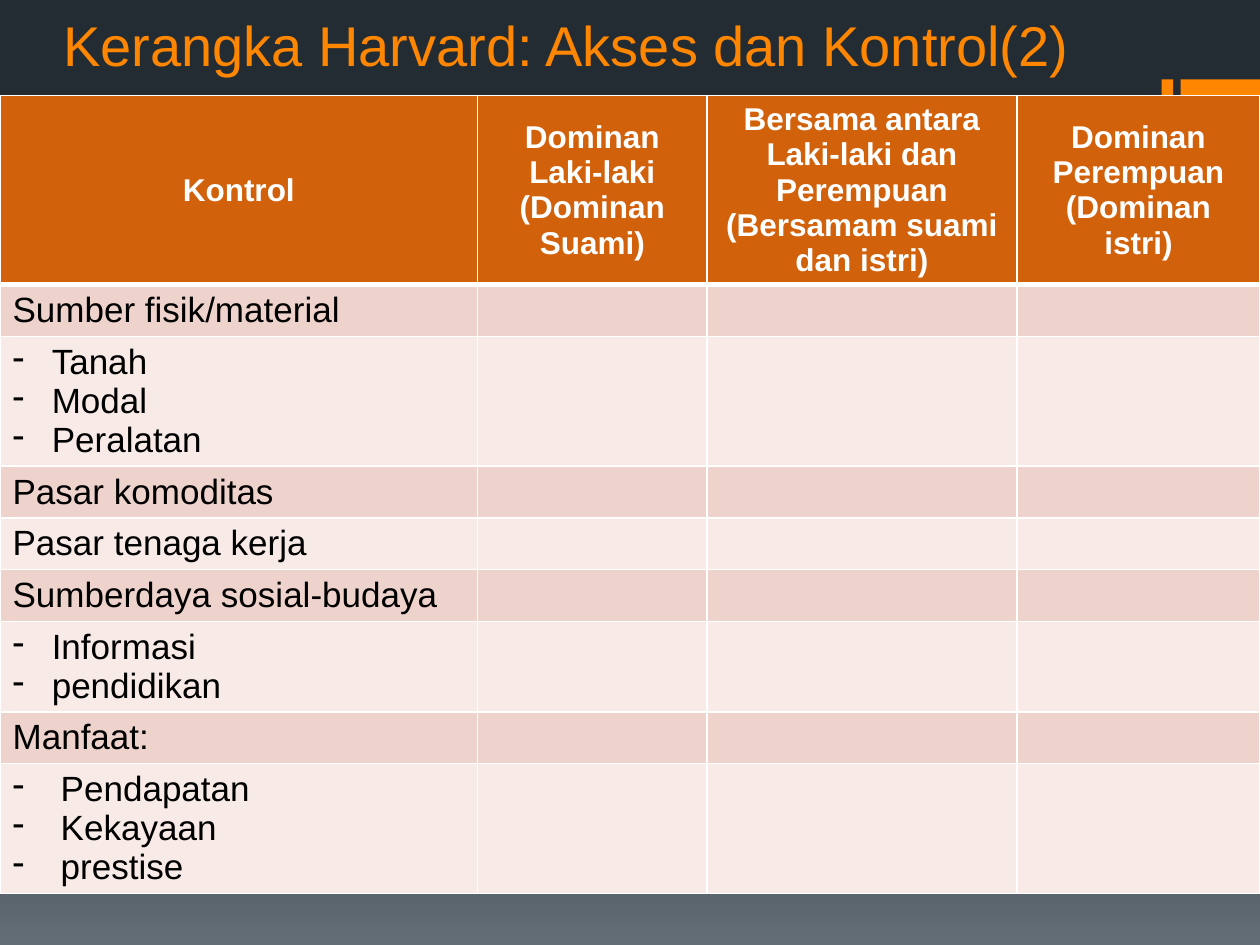
from copy import deepcopy

from lxml import etree
from pptx import Presentation
from pptx import util as u
from pptx.dml import color
from pptx.enum import shapes, text
from pptx.oxml import ns

COLORS = {
    "orange": "FF8600",
    "header": "D2610C",
    "odd_row": "EED2CC",
    "even_row": "F7EAE7",
    "white": "FFFFFF",
    "black": "000000",
}
BACKDROP = [(0, "242C33"), (0.65, "273037"), (1, "636D76")]
HEADINGS = [
    "Kontrol",
    "Dominan Laki-laki (Dominan Suami)",
    "Bersama antara Laki-laki dan Perempuan (Bersamam suami dan istri)",
    "Dominan Perempuan (Dominan istri)",
]
RESOURCES = [
    (["Sumber fisik/material"], 0),
    (["Tanah", "Modal", "Peralatan"], 0.79),
    (["Pasar komoditas"], 0),
    (["Pasar tenaga kerja"], 0),
    (["Sumberdaya sosial-budaya"], 0),
    (["Informasi", "pendidikan"], 0.79),
    (["Manfaat:"], 0),
    (["Pendapatan", "Kekayaan", "prestise"], 0.97),
]
COLUMN_WIDTHS = [9.63, 4.62, 6.25, 4.9]
ROW_HEIGHT = 1.04


def rgb(name):
    return color.RGBColor.from_string(COLORS[name])


def write(paragraph, words, size, ink, bold=False, align=text.PP_ALIGN.LEFT, indent=0):
    paragraph.alignment = align
    run = paragraph.add_run()
    run.text = words
    run.font.name = "Arial"
    run.font.size = u.Pt(size)
    run.font.bold = bold
    run.font.color.rgb = rgb(ink)
    if indent:
        properties = paragraph._p.get_or_add_pPr()
        properties.set("marL", str(u.Cm(indent)))
        properties.set("indent", str(-u.Cm(indent)))
        etree.SubElement(properties, ns.qn("a:buFontTx"))
        etree.SubElement(properties, ns.qn("a:buChar"), char="-")


def paint_background(slide):
    fill = slide.background.fill
    fill.gradient()
    fill.gradient_angle = 270
    first_stop = slide._element.xpath(".//a:gs")[0]
    first_stop.addnext(deepcopy(first_stop))
    for stop, (position, tint) in zip(fill.gradient_stops, BACKDROP):
        stop.position = position
        stop.color.rgb = color.RGBColor.from_string(tint)


def add_accent(slide, left, width):
    accent = slide.shapes.add_shape(
        shapes.MSO_SHAPE.RECTANGLE, u.Cm(left), u.Cm(1.6), u.Cm(width), u.Cm(1.6)
    )
    accent.shadow.inherit = False
    accent.fill.solid()
    accent.fill.fore_color.rgb = rgb("orange")
    accent.line.fill.background()


def set_title(slide, words):
    title = slide.shapes.title
    title.left, title.top = u.Cm(1.02), u.Cm(-1.5)
    title.width, title.height = u.Cm(22.1), u.Cm(3.2)
    frame = title.text_frame
    frame.word_wrap = True
    frame.auto_size = text.MSO_AUTO_SIZE.NONE
    frame.vertical_anchor = text.MSO_ANCHOR.BOTTOM
    write(frame.paragraphs[0], words, size=32, ink="orange")


def style_cell(cell, fill, bottom=1, top=1):
    properties = cell._tc.get_or_add_tcPr()
    for side, width in (("lnL", 1), ("lnR", 1), ("lnT", top), ("lnB", bottom)):
        border = etree.SubElement(properties, ns.qn(f"a:{side}"), w=str(u.Pt(width)))
        solid = etree.SubElement(border, ns.qn("a:solidFill"))
        etree.SubElement(solid, ns.qn("a:srgbClr"), val=COLORS["white"])
    cell.fill.solid()
    cell.fill.fore_color.rgb = rgb(fill)


def fill_header(table):
    for cell, heading in zip(table.rows[0].cells, HEADINGS):
        style_cell(cell, "header", bottom=3)
        cell.vertical_anchor = text.MSO_ANCHOR.MIDDLE
        write(cell.text_frame.paragraphs[0], heading, size=18, ink="white",
              bold=True, align=text.PP_ALIGN.CENTER)


def fill_resources(table):
    for number, (entries, indent) in enumerate(RESOURCES, start=1):
        cells = table.rows[number].cells
        for cell in cells:
            style_cell(cell, "odd_row" if number % 2 else "even_row",
                       top=3 if number == 1 else 1)
        frame = cells[0].text_frame
        for index, entry in enumerate(entries):
            paragraph = frame.add_paragraph() if index else frame.paragraphs[0]
            write(paragraph, entry, size=20, ink="black", indent=indent)


def add_control_table(slide):
    holder = slide.shapes.add_table(
        len(RESOURCES) + 1, len(HEADINGS), u.Cm(0), u.Cm(1.93), u.Cm(25.4), u.Cm(17.09)
    )
    table = holder.table
    for column, width in zip(table.columns, COLUMN_WIDTHS):
        column.width = u.Cm(width)
    for row in table.rows:
        row.height = u.Cm(ROW_HEIGHT)
    holder.height = u.Cm(17.09)
    fill_header(table)
    fill_resources(table)


def main():
    deck = Presentation()
    deck.slide_width, deck.slide_height = u.Cm(25.4), u.Cm(19.05)
    slide = deck.slides.add_slide(deck.slide_layouts[5])
    paint_background(slide)
    add_accent(slide, left=23.42, width=0.23)
    add_accent(slide, left=23.8, width=1.6)
    set_title(slide, "Kerangka Harvard: Akses dan Kontrol(2)")
    add_control_table(slide)
    deck.save("out.pptx")


if __name__ == "__main__":
    main()
